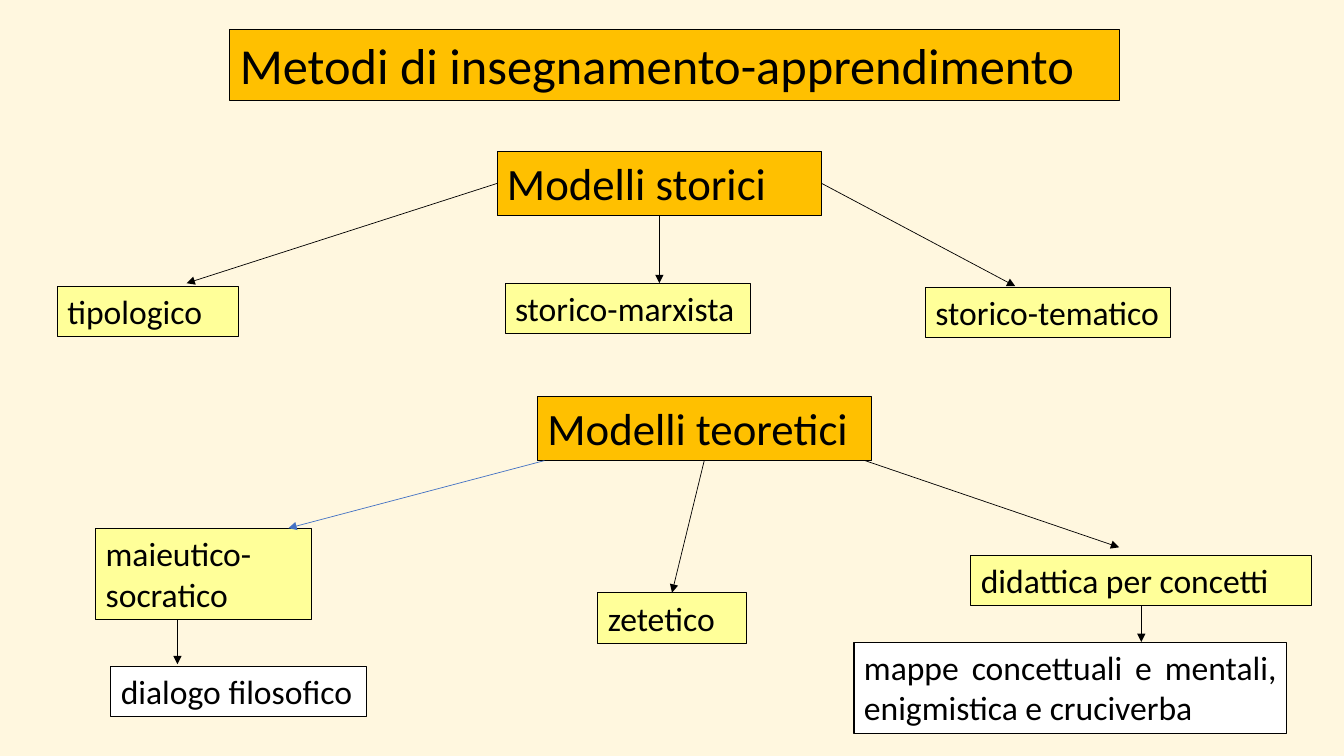
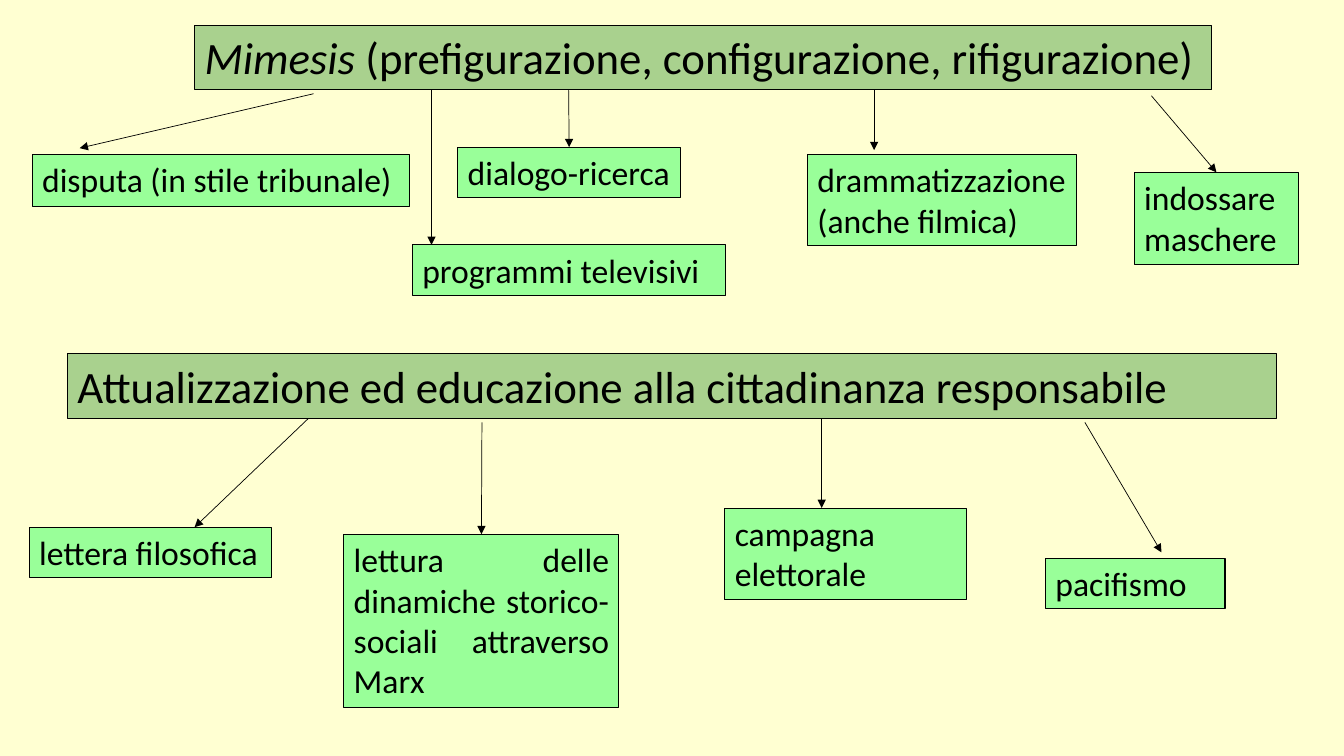
from dataclasses import dataclass

from lxml import etree
from pptx import Presentation
from pptx.dml.color import RGBColor
from pptx.enum.shapes import MSO_CONNECTOR, MSO_SHAPE
from pptx.enum.text import MSO_ANCHOR, MSO_AUTO_SIZE, PP_ALIGN
from pptx.oxml.ns import qn
from pptx.util import Inches, Pt

RECTANGLE = MSO_SHAPE.RECTANGLE
STRAIGHT = MSO_CONNECTOR.STRAIGHT
JUSTIFY = PP_ALIGN.JUSTIFY
TOP_ANCHOR = MSO_ANCHOR.TOP
FIT_SHAPE = MSO_AUTO_SIZE.SHAPE_TO_FIT_TEXT
TOP, LEFT, BOTTOM, RIGHT = range(4)

BLACK = RGBColor(0x00, 0x00, 0x00)
WHITE = RGBColor(0xFF, 0xFF, 0xFF)
BLUE = RGBColor(0x44, 0x72, 0xC4)
CREAM = RGBColor(0xFF, 0xF7, 0xDF)
AMBER = RGBColor(0xFF, 0xC0, 0x00)
YELLOW = RGBColor(0xFF, 0xFF, 0x99)
PALE_YELLOW = RGBColor(0xFF, 0xFF, 0xD2)
SAGE = RGBColor(0xA9, 0xD1, 0x8E)
MINT = RGBColor(0x99, 0xFF, 0x99)

FONT = "Calibri"
TITLE_SIZE, HEADING_SIZE, TOPIC_SIZE = 36, 32, 24
ONE_LINE, TWO_LINES, HEADING_HEIGHT = 0.5, 0.91, 0.64


@dataclass
class Palette:
    background: RGBColor
    heading: RGBColor
    topic: RGBColor


@dataclass
class Topic:
    """A box and its arrow; an arrow end is a point or the side of a box."""
    text: str
    box: tuple
    start: object
    end: object
    line: RGBColor = BLACK


WARM = Palette(CREAM, AMBER, YELLOW)
GREEN = Palette(PALE_YELLOW, SAGE, MINT)


def add_box(slide, box, runs, size, fill):
    """Draw a bordered box; runs are (text, italic) pairs."""
    shape = slide.shapes.add_shape(RECTANGLE, *map(Inches, box))
    shape.shadow.inherit = False
    shape.fill.solid()
    shape.fill.fore_color.rgb = fill
    shape.line.color.rgb = BLACK
    shape.line.width = Pt(0.75)
    frame = shape.text_frame
    frame.word_wrap = True
    frame.auto_size = FIT_SHAPE
    frame.vertical_anchor = TOP_ANCHOR
    paragraph = frame.paragraphs[0]
    paragraph.alignment = JUSTIFY
    for text, italic in runs:
        run = paragraph.add_run()
        run.text = text
        run.font.name = FONT
        run.font.size = Pt(size)
        run.font.italic = italic
        run.font.color.rgb = BLACK
    return shape


def add_arrow(slide, origin, topic, parent, child):
    """Join parent to child; points are measured from origin."""
    def place(end):
        if isinstance(end, int):
            return origin
        return origin[0] + Inches(end[0]), origin[1] + Inches(end[1])

    connector = slide.shapes.add_connector(
        STRAIGHT, *place(topic.start), *place(topic.end))
    if isinstance(topic.start, int):
        connector.begin_connect(parent, topic.start)
    if isinstance(topic.end, int):
        connector.end_connect(child, topic.end)
    connector.line.color.rgb = topic.line
    connector.line.width = Pt(0.5)
    line = connector.line._get_or_add_ln()
    etree.SubElement(line, qn("a:tailEnd"), type="triangle")
    etree.SubElement(connector._element.spPr, qn("a:effectLst"))


def add_topic(slide, origin, topic, parent, fill):
    left, top, width, height = topic.box
    box = (origin[0].inches + left, origin[1].inches + top, width, height)
    shape = add_box(slide, box, [(topic.text, False)], TOPIC_SIZE, fill)
    add_arrow(slide, origin, topic, parent, shape)
    return shape


def add_branch(slide, palette, top, heading_box, runs, topics):
    """Draw a heading and its topics, with heights measured from top."""
    left, width = heading_box
    heading = add_box(slide, (left, top, width, HEADING_HEIGHT), runs,
                      HEADING_SIZE, palette.heading)
    origin = Inches(0), Inches(top)
    return [add_topic(slide, origin, topic, heading, palette.topic)
            for topic in topics]


def add_detail(slide, parent, detail):
    """Draw a white box placed relative to its parent topic."""
    origin = Inches(parent.left.inches), Inches(parent.top.inches)
    add_topic(slide, origin, detail, parent, WHITE)


def add_slide(presentation, palette):
    slide = presentation.slides.add_slide(presentation.slide_layouts[6])
    slide.background.fill.solid()
    slide.background.fill.fore_color.rgb = palette.background
    return slide


def build_methods_slide(presentation):
    slide = add_slide(presentation, WARM)
    add_box(slide, (2.28, 0.29, 8.82, 0.71),
            [("Metodi di insegnamento-apprendimento", False)],
            TITLE_SIZE, WARM.heading)
    add_branch(slide, WARM, 1.5, (4.93, 3.22), [("Modelli storici", False)], [
        Topic("tipologico", (0.57, 1.34, 1.8, ONE_LINE), LEFT, (1.85, 1.31)),
        Topic("storico-marxista", (5.01, 1.31, 2.43, ONE_LINE),
              BOTTOM, (6.54, 1.31)),
        Topic("storico-tematico", (9.18, 1.35, 2.43, ONE_LINE),
              RIGHT, (10.07, 1.34)),
    ])
    socratic, _, concepts = add_branch(
        slide, WARM, 3.93, (5.33, 3.31), [("Modelli teoretici", False)], [
            Topic("maieutico-socratico", (0.95, 1.31, 2.14, TWO_LINES),
                  (5.4, 0.64), (2.86, 1.31), BLUE),
            Topic("zetetico", (5.93, 1.95, 1.47, ONE_LINE), BOTTOM, TOP),
            Topic("didattica per concetti", (9.63, 1.58, 3.38, ONE_LINE),
                  (8.58, 0.64), (11.1, 1.5)),
        ])
    add_detail(slide, socratic, Topic(
        "dialogo filosofico", (0.15, 1.37, 2.54, ONE_LINE),
        (0.81, 0.91), (0.81, 1.35)))
    add_detail(slide, concepts, Topic(
        "mappe concettuali e mentali, enigmistica e cruciverba",
        (-1.16, 0.86, 4.29, TWO_LINES), BOTTOM, (1.69, 0.86)))


def build_activities_slide(presentation):
    slide = add_slide(presentation, GREEN)
    mimesis = [("Mimesis", True),
               (" (prefigurazione, configurazione, rifigurazione)", False)]
    add_branch(slide, GREEN, 0.25, (1.93, 10.09), mimesis, [
        Topic("disputa (in stile tribunale)", (0.32, 1.28, 3.74, 0.52),
              (3.11, 0.68), (0.79, 1.22)),
        Topic("dialogo-ricerca", (4.54, 1.21, 2.21, ONE_LINE),
              (5.64, 0.64), TOP),
        Topic("drammatizzazione (anche filmica)",
              (8.01, 1.28, 2.67, TWO_LINES), (8.67, 0.64), (8.67, 1.24)),
        Topic("indossare maschere", (11.25, 1.46, 1.63, TWO_LINES),
              (11.42, 0.7), TOP),
        Topic("programmi televisivi", (4.09, 2.18, 3.11, ONE_LINE),
              (4.28, 0.64), (4.28, 2.18)),
    ])
    citizenship = [
        ("Attualizzazione ed educazione alla cittadinanza responsabile", False)]
    add_branch(slide, GREEN, 3.51, (0.67, 11.99), citizenship, [
        Topic("lettera filosofica", (0.29, 1.72, 2.4, ONE_LINE),
              (3.06, 0.64), (1.93, 1.72)),
        Topic("lettura delle dinamiche storico-sociali attraverso Marx",
              (3.41, 1.79, 2.73, 1.72), (4.78, 0.68), TOP),
        Topic("campagna elettorale", (7.19, 1.53, 2.4, TWO_LINES),
              (8.15, 0.64), (8.15, 1.53)),
        Topic("pacifismo", (10.37, 2.03, 1.78, ONE_LINE),
              (10.76, 0.68), (11.52, 1.97)),
    ])


def main():
    presentation = Presentation()
    presentation.slide_width = Inches(13.33)
    presentation.slide_height = Inches(7.5)
    build_methods_slide(presentation)
    build_activities_slide(presentation)
    presentation.save("out.pptx")


if __name__ == "__main__":
    main()
